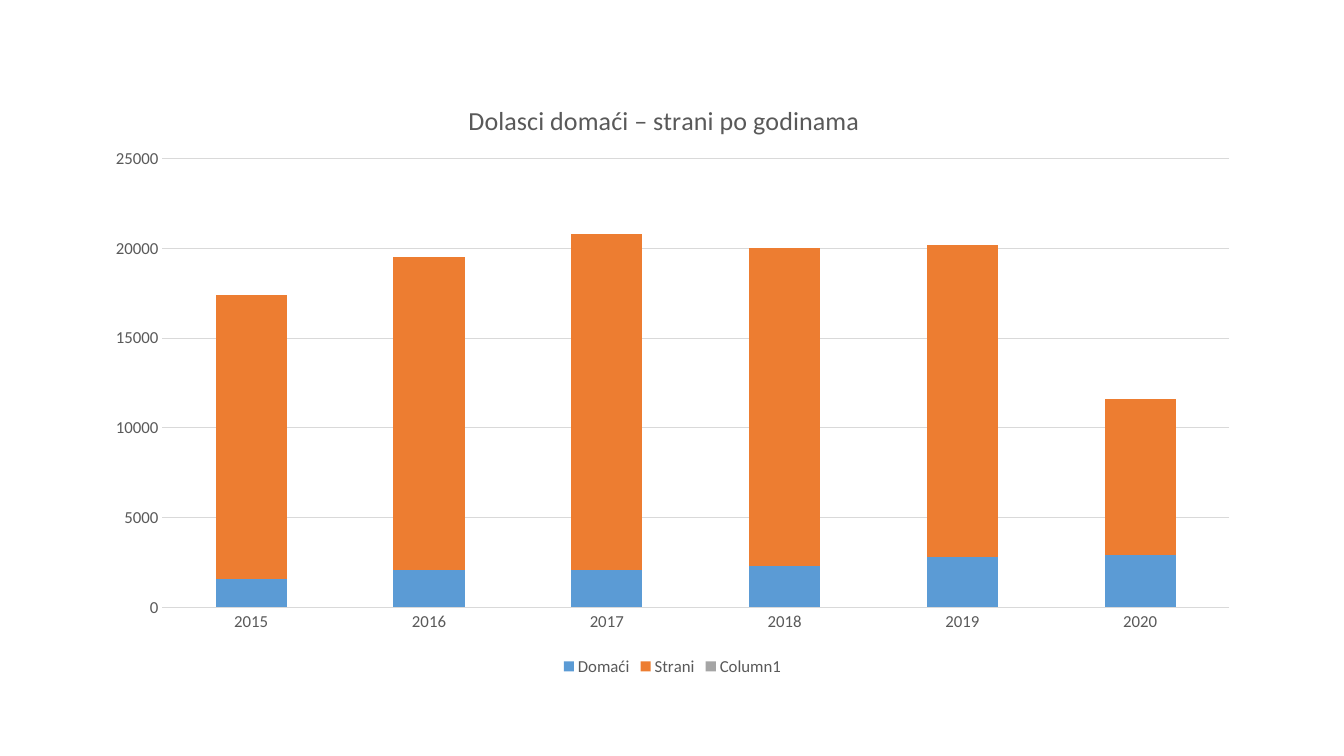
import pptx
import pptx.chart.data
import pptx.dml.color
import pptx.enum.chart
import pptx.oxml
import pptx.oxml.ns
import pptx.util
from pptx.util import Inches

TEXT_GREY = "595959"
GRID_GREY = "D9D9D9"
YEARS = ["2015", "2016", "2017", "2018", "2019", "2020"]
ARRIVALS = [
    ("Domaći", [1600, 2100, 2100, 2300, 2800, 2900], "5B9BD5"),
    ("Strani", [15800, 17400, 18700, 17700, 17400, 8700], "ED7D31"),
    ("Column1", [None] * len(YEARS), "A5A5A5"),
]


def color(hex_string):
    return pptx.dml.color.RGBColor.from_string(hex_string)


def style_font(font, size):
    font.name = "Calibri"
    font.size = pptx.util.Pt(size)
    font.bold = False
    font.color.rgb = color(TEXT_GREY)


def set_layout(parent, before, target=None, **fractions):
    """Place a chart part by fractions of the chart's width and height."""
    for old_layout in parent.findall(pptx.oxml.ns.qn("c:layout")):
        parent.remove(old_layout)
    tags = f'<c:layoutTarget val="{target}"/>' if target else ""
    tags += '<c:xMode val="edge"/><c:yMode val="edge"/>'
    tags += "".join(f'<c:{key} val="{value}"/>' for key, value in fractions.items())
    layout = pptx.oxml.parse_xml(
        f'<c:layout {pptx.oxml.ns.nsdecls("c")}>'
        f"<c:manualLayout>{tags}</c:manualLayout></c:layout>"
    )
    parent.insert(before, layout)


def add_arrivals_chart(slide, left, top, width, height):
    chart_data = pptx.chart.data.CategoryChartData()
    chart_data.categories = YEARS
    for name, values, _ in ARRIVALS:
        chart_data.add_series(name, values)
    chart = slide.shapes.add_chart(
        pptx.enum.chart.XL_CHART_TYPE.COLUMN_STACKED,
        left, top, width, height, chart_data,
    ).chart
    style_font(chart.font, 12)

    # Title
    chart.has_title = True
    heading = chart.chart_title.text_frame.paragraphs[0]
    heading.text = "Dolasci domaći – strani po godinama"
    style_font(heading.font, 18.6)
    chart.chart_title.include_in_layout = False
    set_layout(chart.chart_title._element, 1, x=0.32, y=0.04)

    # Stacked columns
    columns = chart.plots[0]
    columns.gap_width = 150
    columns.overlap = 100
    columns.vary_by_categories = False
    for series, (_, _, fill) in zip(columns.series, ARRIVALS):
        series.format.fill.solid()
        series.format.fill.fore_color.rgb = color(fill)
    plot_area = chart._chartSpace.chart.plotArea
    set_layout(plot_area, 0, "inner", x=0.06, y=0.14, w=0.92, h=0.74)

    # Axes and gridlines
    for axis in (chart.category_axis, chart.value_axis):
        axis.major_tick_mark = pptx.enum.chart.XL_TICK_MARK.NONE
        axis.minor_tick_mark = pptx.enum.chart.XL_TICK_MARK.NONE
        axis.format.line.fill.background()
        style_font(axis.tick_labels.font, 12)
    chart.value_axis.minimum_scale = 0
    chart.value_axis.maximum_scale = 25000
    chart.value_axis.major_unit = 5000
    gridline = chart.value_axis.major_gridlines.format.line
    gridline.color.rgb = color(GRID_GREY)
    gridline.width = pptx.util.Pt(0.75)

    # Legend
    chart.has_legend = True
    chart.legend.position = pptx.enum.chart.XL_LEGEND_POSITION.BOTTOM
    chart.legend.include_in_layout = False
    style_font(chart.legend.font, 12)


def main():
    presentation = pptx.Presentation()
    presentation.slide_width = Inches(13.33)
    presentation.slide_height = Inches(7.5)
    slide = presentation.slides.add_slide(presentation.slide_layouts[6])
    add_arrivals_chart(slide, Inches(0.92), Inches(0.73), Inches(11.5), Inches(6.02))
    presentation.save("out.pptx")


if __name__ == "__main__":
    main()
